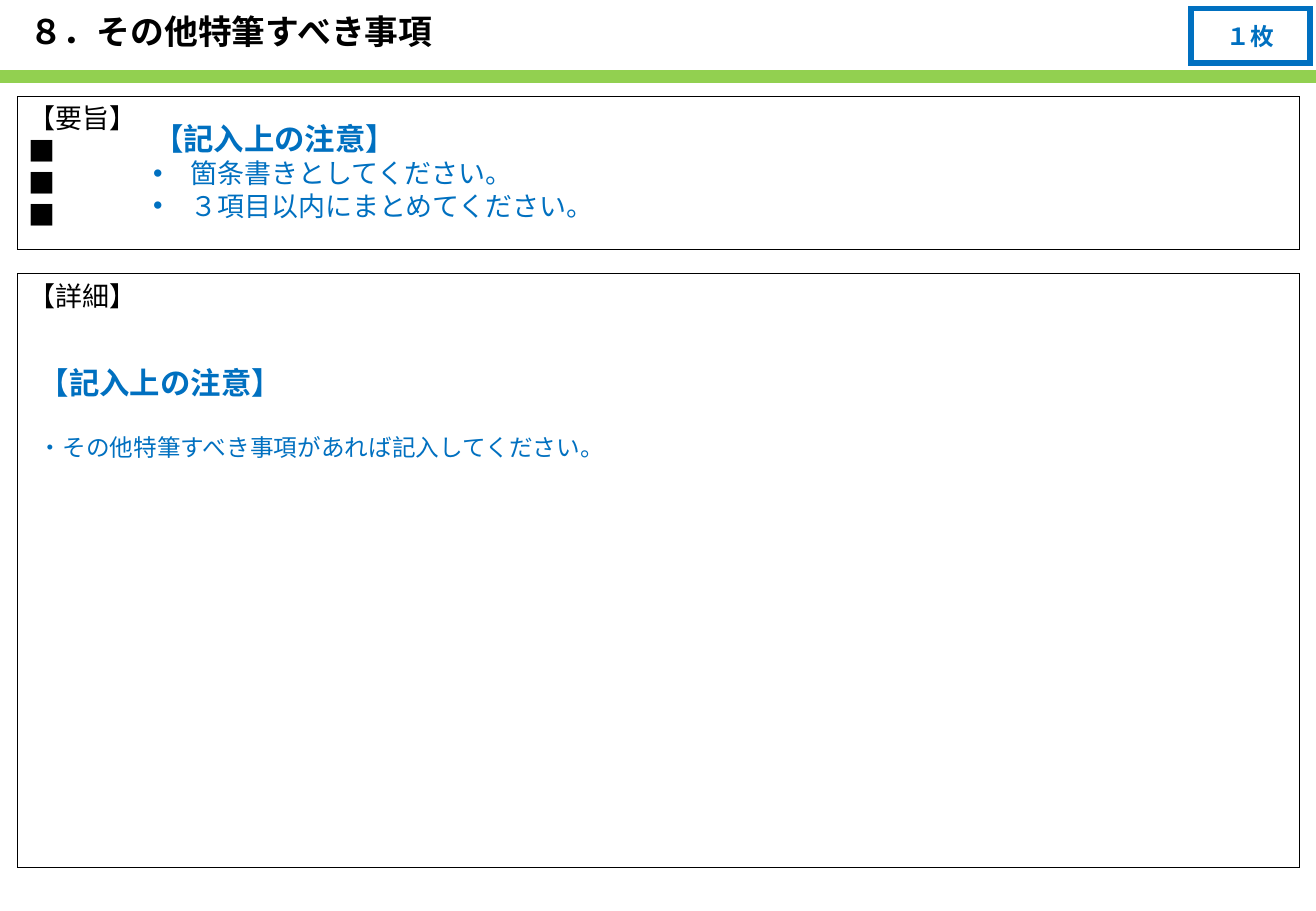
from dataclasses import dataclass

from lxml.etree import SubElement
from pptx import Presentation
from pptx.dml.color import RGBColor
from pptx.enum.shapes import MSO_SHAPE
from pptx.enum.text import MSO_ANCHOR, MSO_AUTO_SIZE, PP_ALIGN
from pptx.oxml.ns import qn
from pptx.shapes.autoshape import Shape
from pptx.text.text import TextFrame
from pptx.util import Emu, Inches, Pt


@dataclass(frozen=True)
class Theme:
    font: str = "Noto Sans CJK JP"
    ink: str = "000000"
    paper: str = "FFFFFF"
    accent: str = "0070C0"
    band: str = "92D050"
    title: int = 20
    heading: int = 18
    body: int = 16
    small: int = 14
    leading: float = 1.2  # line height as a share of the type size


@dataclass(frozen=True)
class Area:
    """Position and size in percent of the slide."""
    left: float
    top: float
    width: float
    height: float


@dataclass(frozen=True)
class Line:
    text: str
    size: int
    color: str
    bold: bool = False
    bullet: bool = False
    gap: float = 0


@dataclass(frozen=True)
class Block:
    area: Area
    lines: tuple[Line, ...] = ()
    border: str = "000000"
    weight: float = 0.25
    fill: str = "FFFFFF"
    centred: bool = False


THEME = Theme()
SLIDE_WIDTH, SLIDE_HEIGHT = Inches(10.83), Inches(7.5)
BULLET_INDENT = Inches(0.31)
NOTE_HEADING = Line("【記入上の注意】", THEME.heading, THEME.accent, bold=True)


def ink_lines(*texts: str) -> tuple[Line, ...]:
    return tuple(Line(text, THEME.body, THEME.ink) for text in texts)


TITLE = Block(
    Area(1.29, 0.53, 90.03, 7.33),
    (Line("８．その他特筆すべき事項", THEME.title, THEME.ink, bold=True),),
)
PANELS = (
    # Band under the title
    Block(Area(0, 7.87, 100, 1.07), border=THEME.band, weight=2, fill=THEME.band),
    # Details
    Block(Area(1.29, 30, 97.41, 65.2), ink_lines("【詳細】")),
    # Page allowance
    Block(
        Area(90.49, 0.93, 9.05, 6),
        (Line("１枚", THEME.small, THEME.accent, bold=True),),
        border=THEME.accent, weight=3.5, centred=True,
    ),
    # Summary
    Block(Area(1.29, 10.53, 97.41, 16.8), ink_lines("【要旨】", "■", "■", "■")),
)
NOTES = (
    Block(
        Area(10.71, 12.53, 39.98, 13.07),
        (
            NOTE_HEADING,
            Line("箇条書きとしてください。", THEME.body, THEME.accent, bullet=True),
            Line("３項目以内にまとめてください。", THEME.body, THEME.accent, bullet=True),
        ),
    ),
    Block(
        Area(2.03, 39.33, 92.34, 52.67),
        (
            NOTE_HEADING,
            Line("・その他特筆すべき事項があれば記入してください。", THEME.small,
                 THEME.accent, gap=THEME.body * THEME.leading),
        ),
    ),
)


def place(shape: Shape, area: Area) -> None:
    shape.left = Emu(round(SLIDE_WIDTH * area.left / 100))
    shape.top = Emu(round(SLIDE_HEIGHT * area.top / 100))
    shape.width = Emu(round(SLIDE_WIDTH * area.width / 100))
    shape.height = Emu(round(SLIDE_HEIGHT * area.height / 100))


def write(frame: TextFrame, block: Block) -> None:
    frame.word_wrap = True
    frame.auto_size = MSO_AUTO_SIZE.NONE
    frame.vertical_anchor = MSO_ANCHOR.MIDDLE if block.centred else MSO_ANCHOR.TOP
    for index, line in enumerate(block.lines):
        paragraph = frame.add_paragraph() if index else frame.paragraphs[0]
        paragraph.text = line.text
        paragraph.alignment = PP_ALIGN.CENTER if block.centred else PP_ALIGN.LEFT
        paragraph.line_spacing = Pt(line.size * THEME.leading)
        paragraph.space_before = Pt(line.gap)
        paragraph.space_after = Pt(0)

        # Bullet and hanging indent
        properties = paragraph._p.get_or_add_pPr()
        indent = BULLET_INDENT if line.bullet else 0
        properties.set("marL", str(indent))
        properties.set("indent", str(-indent))
        if line.bullet:
            SubElement(properties, qn("a:buFont"), typeface="Arial")
            SubElement(properties, qn("a:buChar"), char="•")
        else:
            SubElement(properties, qn("a:buNone"))

        font = paragraph.font
        font.size = Pt(line.size)
        font.bold = line.bold
        font.color.rgb = RGBColor.from_string(line.color)
        font.name = THEME.font
        SubElement(font._element, qn("a:ea"), typeface=THEME.font)


def draw_panel(slide, block: Block) -> None:
    panel = slide.shapes.add_shape(MSO_SHAPE.RECTANGLE, 0, 0, 0, 0)
    place(panel, block.area)
    panel.shadow.inherit = False
    panel.fill.solid()
    panel.fill.fore_color.rgb = RGBColor.from_string(block.fill)
    panel.line.color.rgb = RGBColor.from_string(block.border)
    panel.line.width = Pt(block.weight)
    SubElement(panel.line._get_or_add_ln(), qn("a:miter"), lim="800000")
    write(panel.text_frame, block)


def fill_placeholder(placeholder: Shape, block: Block) -> None:
    place(placeholder, block.area)
    write(placeholder.text_frame, block)


def main() -> None:
    presentation = Presentation()
    presentation.slide_width, presentation.slide_height = SLIDE_WIDTH, SLIDE_HEIGHT
    slide = presentation.slides.add_slide(
        presentation.slide_layouts.get_by_name("Two Content"))

    # Title and framed panels
    title, *bodies = slide.placeholders
    fill_placeholder(title, TITLE)
    for panel in PANELS:
        draw_panel(slide, panel)

    # Notes for the writer, in front of the panels
    for body, note in zip(bodies, NOTES):
        fill_placeholder(body, note)
        slide.shapes._spTree.append(body._element)

    presentation.save("out.pptx")


if __name__ == "__main__":
    main()
